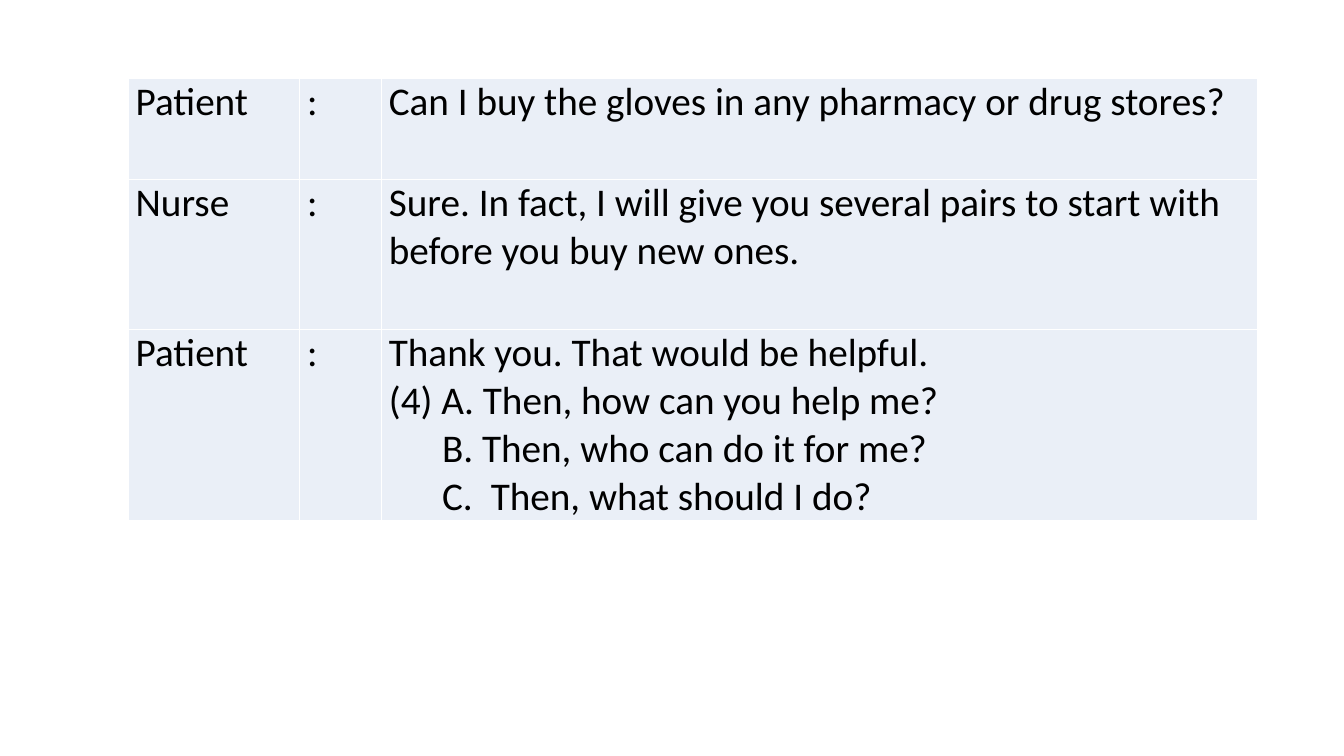
"""Build a slide with a patient and nurse dialogue table."""
from lxml.etree import SubElement
from pptx import Presentation
from pptx.dml.color import RGBColor
from pptx.oxml.ns import qn
from pptx.util import Cm, Pt

BLACK = RGBColor(0x00, 0x00, 0x00)
WHITE = RGBColor(0xFF, 0xFF, 0xFF)
PALE_BLUE = RGBColor(0xEA, 0xEF, 0xF7)

COLUMN_WIDTHS = (4.32, 2.06, 22.09)
DIALOGUE = [
    (2.54, "Patient", [("Can I buy the gloves in any pharmacy or drug stores?", 0, 0)]),
    (3.78, "Nurse", [("Sure. In fact, I will give you several pairs to start with "
                      "before you buy new ones.", 0, 0)]),
    (4.81, "Patient", [("Thank you. That would be helpful.", 0, 0),
                       ("(4) A. Then, how can you help me?", 0, 0),
                       ("B. Then, who can do it for me?", 1.34, 0),
                       ("C.\tThen, what should I do?", 2.57, -1.23)]),
]


class DialogueSlide:
    """Hold the style and the current slide."""

    FONT = {"name": "Calibri", "size": Pt(28)}
    CELL = {"margin_left": Cm(0.19), "margin_right": Cm(0.19),
            "margin_top": 0, "margin_bottom": 0}
    LABEL = {"space_before": Pt(3), "space_after": Pt(3)}
    SPEECH = {"space_before": Pt(0), "space_after": Pt(0)}

    def __init__(self, deck):
        self.slide = deck.slides.add_slide(deck.slide_layouts[6])

    @staticmethod
    def apply(target, values):
        """Set each named attribute of the target."""
        for name, value in values.items():
            setattr(target, name, value)

    def borders(self, cell):
        """Draw thin white lines on all four sides of a cell."""
        properties = cell._tc.get_or_add_tcPr()
        for place, side in enumerate(("lnL", "lnR", "lnT", "lnB")):
            line = SubElement(properties, qn(f"a:{side}"), w=str(Pt(1)))
            fill = SubElement(line, qn("a:solidFill"))
            SubElement(fill, qn("a:srgbClr"), val=str(WHITE))
            properties.insert(place, line)

    def cell(self, cell, lines, spacing):
        """Fill a cell with lines of text, left margin and first-line indent."""
        self.apply(cell, self.CELL)
        cell.fill.solid()
        cell.fill.fore_color.rgb = PALE_BLUE
        self.borders(cell)
        frame = cell.text_frame
        for number, (words, margin, indent) in enumerate(lines):
            paragraph = frame.add_paragraph() if number else frame.paragraphs[0]
            self.apply(paragraph, spacing)
            properties = paragraph._p.get_or_add_pPr()
            properties.set("marL", str(Cm(margin)))
            properties.set("indent", str(Cm(indent)))
            run = paragraph.add_run()
            run.text = words
            self.apply(run.font, self.FONT)
            run.font.color.rgb = BLACK

    def table(self, left, top, widths, turns):
        """Add the table with one row for each turn of the dialogue."""
        height = sum(turn[0] for turn in turns)
        table = self.slide.shapes.add_table(
            len(turns), len(widths), Cm(left), Cm(top),
            Cm(sum(widths)), Cm(height)).table
        self.apply(table, {"first_row": False, "horz_banding": False})
        for column, width in zip(table.columns, widths):
            column.width = Cm(width)
        for row, (row_height, speaker, speech) in zip(table.rows, turns):
            row.height = Cm(row_height)
            name, colon, words = row.cells
            self.cell(name, [(speaker, 0, 0)], self.LABEL)
            self.cell(colon, [(":", 0, 0)], self.LABEL)
            self.cell(words, speech, self.SPEECH)


def main():
    """Build and save the deck."""
    deck = Presentation()
    deck.slide_width, deck.slide_height = Cm(33.87), Cm(19.05)
    DialogueSlide(deck).table(3.23, 1.98, COLUMN_WIDTHS, DIALOGUE)
    deck.save("out.pptx")


if __name__ == "__main__":
    main()
